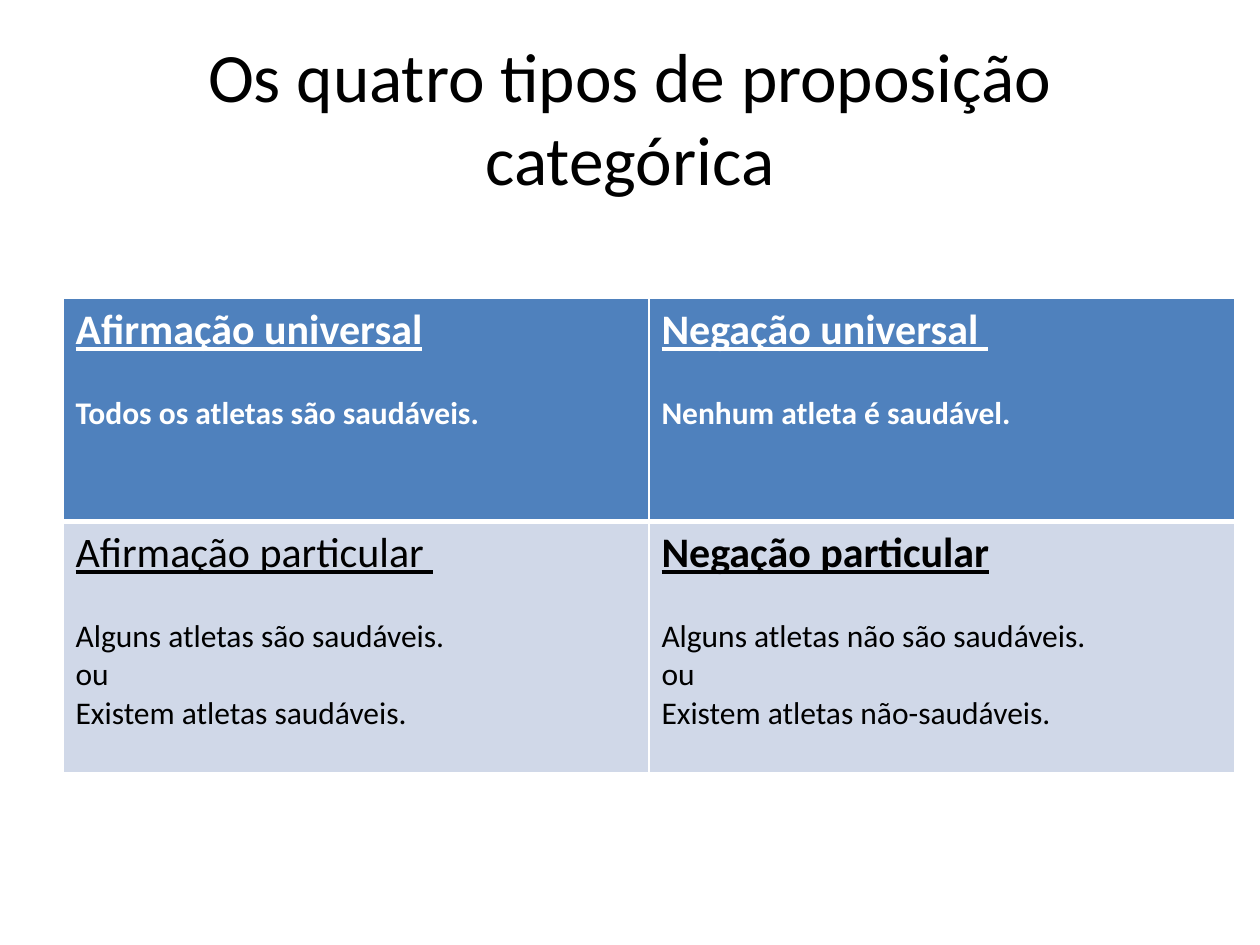
from lxml.etree import SubElement
from pptx import Presentation
from pptx.dml.color import RGBColor
from pptx.enum.text import MSO_ANCHOR, MSO_AUTO_SIZE, PP_ALIGN
from pptx.oxml.ns import qn
from pptx.util import Inches, Pt

FONT = "Calibri"
COLORS = {"black": "000000", "white": "FFFFFF", "header": "4F81BD", "body": "D0D8E8"}
TITLE_BOX = (0.5, 0.3, 9, 1.25)
TABLE_BOX = (0.5, 2.37, 9.3, 3.76)
HEADER_SHARE = 0.47
HEADING_GAP = 22

# Each cell: heading, heading is bold, example lines
PROPOSITIONS = [
    [("Afirmação universal", True, ["Todos os atletas são saudáveis."]),
     ("Negação universal ", True, ["Nenhum atleta é saudável."])],
    [("Afirmação particular ", False,
      ["Alguns atletas são saudáveis.", "ou", "Existem atletas saudáveis."]),
     ("Negação particular", True,
      ["Alguns atletas não são saudáveis.", "ou", "Existem atletas não-saudáveis."])],
]


def add_run(paragraph, text, size, color, bold=False, underline=False):
    run = paragraph.add_run()
    run.text = text
    font = run.font
    font.name, font.size = FONT, Pt(size)
    font.bold, font.underline = bold, underline
    font.color.rgb = RGBColor.from_string(COLORS[color])


def set_borders(cell, top, bottom):
    properties = cell._tc.get_or_add_tcPr()
    for side, width in (("L", 1), ("R", 1), ("T", top), ("B", bottom)):
        line = SubElement(properties, qn(f"a:ln{side}"), w=str(Pt(width)))
        fill = SubElement(line, qn("a:solidFill"))
        SubElement(fill, qn("a:srgbClr"), val=COLORS["white"])


def fill_cell(cell, proposition, is_header):
    heading, bold, examples = proposition
    color = "white" if is_header else "black"
    set_borders(cell, top=1 if is_header else 3, bottom=3 if is_header else 1)
    cell.fill.solid()
    cell.fill.fore_color.rgb = RGBColor.from_string(COLORS["header" if is_header else "body"])

    text_frame = cell.text_frame
    add_run(text_frame.paragraphs[0], heading, 24, color, bold, underline=True)
    for index, example in enumerate(examples):
        paragraph = text_frame.add_paragraph()
        if index == 0:
            paragraph.space_before = Pt(HEADING_GAP)
        add_run(paragraph, example, 18, color, bold=is_header)


def add_title(slide, box):
    title = slide.shapes.title
    title.left, title.top, title.width, title.height = map(Inches, box)
    text_frame = title.text_frame
    text_frame.word_wrap = True
    text_frame.auto_size = MSO_AUTO_SIZE.NONE
    text_frame.vertical_anchor = MSO_ANCHOR.MIDDLE
    paragraph = text_frame.paragraphs[0]
    paragraph.alignment = PP_ALIGN.CENTER
    add_run(paragraph, "Os quatro tipos de proposição categórica", 39.6, "black")


def add_proposition_table(slide, box):
    left, top, width, height = map(Inches, box)
    row_count, column_count = len(PROPOSITIONS), len(PROPOSITIONS[0])
    table = slide.shapes.add_table(row_count, column_count, left, top, width, height).table
    table.rows[0].height = int(height * HEADER_SHARE)
    table.rows[1].height = height - table.rows[0].height
    for row, propositions in enumerate(PROPOSITIONS):
        for column, proposition in enumerate(propositions):
            fill_cell(table.cell(row, column), proposition, is_header=row == 0)


def main():
    presentation = Presentation()
    presentation.slide_width, presentation.slide_height = Inches(10), Inches(7.5)
    slide = presentation.slides.add_slide(presentation.slide_layouts[5])
    add_title(slide, TITLE_BOX)
    add_proposition_table(slide, TABLE_BOX)
    presentation.save("out.pptx")


if __name__ == "__main__":
    main()
